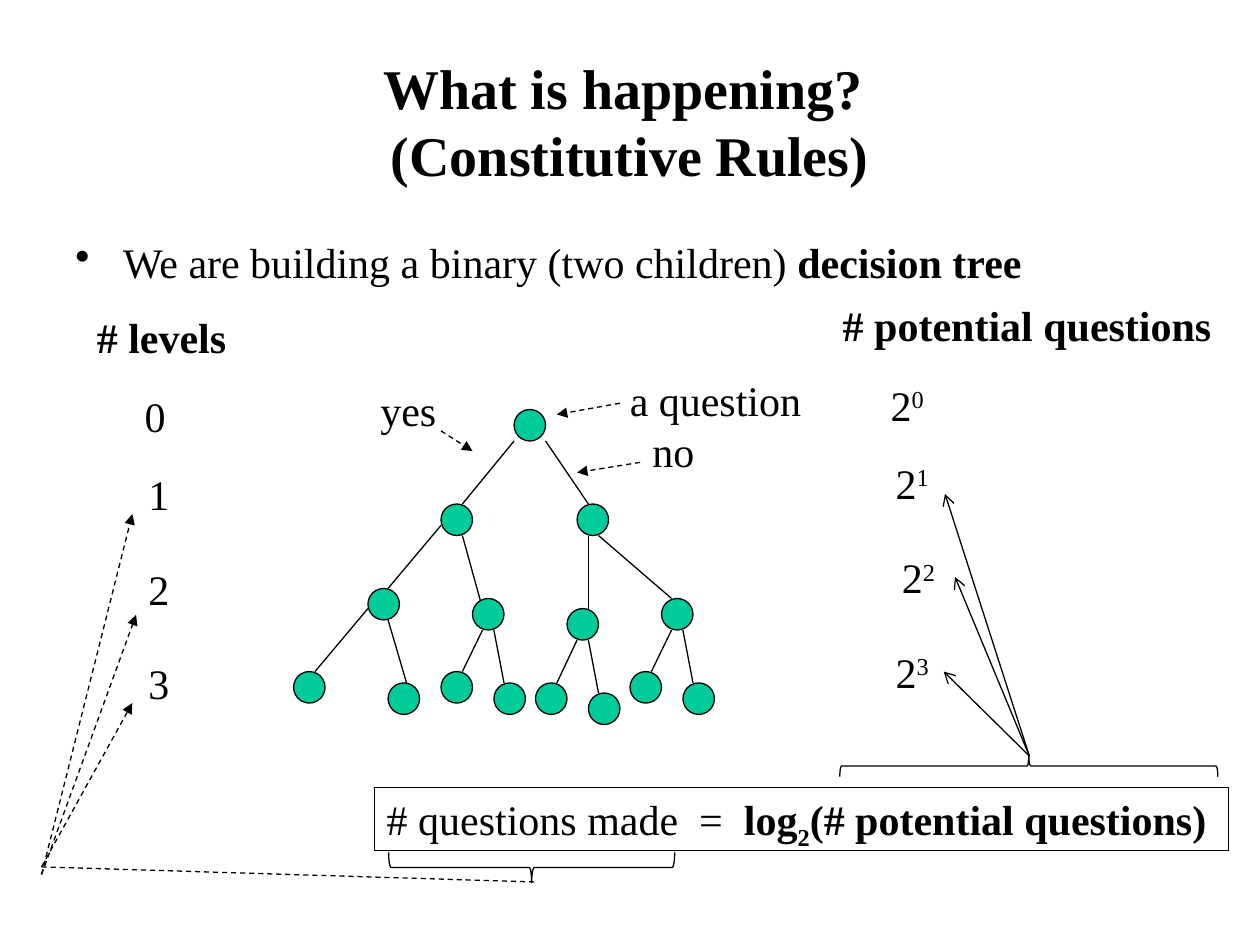
from lxml.etree import SubElement
from pptx import Presentation
from pptx.dml.color import RGBColor
from pptx.enum.dml import MSO_LINE
from pptx.enum.shapes import MSO_CONNECTOR, MSO_SHAPE as SHAPE
from pptx.enum.text import MSO_ANCHOR as ANCHOR, PP_ALIGN as ALIGN
from pptx.oxml.ns import qn
from pptx.util import Inches, Pt

FONT, BLACK, GREEN = "Times New Roman", "000000", "00CC99"
NODE = 0.25

TITLE = [("What is happening? ", "b"), ("\n", ""), ("(Constitutive Rules)", "b")]
BULLET = [("We are building a binary (two children) ", ""), ("decision tree", "b")]
FORMULA = [("# questions made  =  ", ""), ("log", "b"), ("2", "b_"),
           ("(# potential questions)", "b")]

# Left and top of each node, level by level
NODES = [
    [(4.08, 3.25)],
    [(3.5, 4), (4.58, 4)],
    [(2.92, 4.67), (3.75, 4.75), (4.5, 4.83), (5.25, 4.75)],
    [(2.33, 5.33), (3.08, 5.42), (3.5, 5.33), (3.92, 5.42),
     (4.25, 5.42), (4.67, 5.5), (5, 5.33), (5.42, 5.42)],
]
# From and to of each branch: x, y, x, y
BRANCHES = [
    (4.08, 3.5, 3.67, 4), (4.33, 3.5, 4.67, 4),
    (3.5, 4.17, 3.08, 4.67), (3.67, 4.25, 3.83, 4.83),
    (4.67, 4.25, 4.67, 4.83), (4.75, 4.25, 5.33, 4.75),
    (2.92, 4.83, 2.5, 5.33), (3.08, 4.92, 3.25, 5.5),
    (3.83, 5, 3.67, 5.33), (3.92, 5, 4, 5.42),
    (4.58, 5.08, 4.42, 5.42), (4.67, 5.08, 4.75, 5.5),
    (5.33, 5, 5.17, 5.33), (5.42, 5, 5.5, 5.42),
]
# Label, its box, and its dashed arrow
CALLOUTS = [
    ("a question", (4.9, 2.92, 1.56, 0.5), (4.92, 3.2, 4.42, 3.29)),
    ("no", (5.08, 3.33, 0.53, 0.5), (5.08, 3.67, 4.58, 3.75)),
    ("yes", (2.92, 3, 0.65, 0.5), (3.5, 3.42, 3.75, 3.58)),
]
HEADS = [("# levels", (0.67, 2.42, 1.23, 0.5)),
         ("# potential questions", (6.59, 2.33, 3.16, 0.5))]
# Left and top of each level number, then of its power of two
LEVELS = [(1.05, 3.05, 6.97, 2.96), (1.08, 3.67, 7.01, 3.58),
          (1.08, 4.42, 7.06, 4.33), (1.08, 5.17, 7.01, 5.08)]
TO_LEVELS = [(0.33, 6.94, 1.05, 4.08), (0.33, 6.94, 1.08, 4.88),
             (0.33, 6.88, 1.05, 5.58)]
FORK = (8.17, 6)
TO_POWERS = [(7.49, 5.33), (7.58, 4.58), (7.5, 3.92)]

deck = Presentation()
deck.slide_width, deck.slide_height = Inches(10), Inches(7.5)
shapes = deck.slides.add_slide(deck.slide_layouts[6]).shapes


def color(code):
    return RGBColor.from_string(code)


def text(parts, box, size=24, wrap=False, align=ALIGN.LEFT, anchor=ANCHOR.TOP,
         host=None):
    """Write (words, style) parts; b is bold, ^ is raised, _ is lowered."""
    host = host or shapes.add_textbox(*map(Inches, box))
    frame = host.text_frame
    frame.word_wrap, frame.vertical_anchor = wrap, anchor
    para = frame.paragraphs[0]
    para.alignment = align
    for words, style in parts:
        if words == "\n":
            para.add_line_break()
            continue
        run = para.add_run()
        run.text = words
        font = run.font
        font.name, font.size, font.bold = FONT, Pt(size), "b" in style
        font.color.rgb = color(BLACK)
        if "^" in style or "_" in style:
            shift = "30000" if "^" in style else "-25000"
            font._element.set("baseline", shift)
    return para


def bullet(para, indent):
    para.space_before = Pt(4.8)
    props = para._p.get_or_add_pPr()
    props.set("marL", str(Inches(indent)))
    props.set("indent", str(-Inches(indent)))
    SubElement(props, qn("a:buChar")).set("char", "•")


def shape(kind, box, fill=None):
    item = shapes.add_shape(kind, *map(Inches, box))
    item.shadow.inherit = False
    if fill:
        item.fill.solid()
        item.fill.fore_color.rgb = color(fill)
    else:
        item.fill.background()
    item.line.color.rgb, item.line.width = color(BLACK), Pt(0.75)
    return item


def line(ends, tip=None, dash=False):
    item = shapes.add_connector(MSO_CONNECTOR.STRAIGHT, *map(Inches, ends))
    item.line.color.rgb, item.line.width = color(BLACK), Pt(0.75)
    if dash:
        item.line.dash_style = MSO_LINE.DASH
    if tip:
        SubElement(item.line._get_or_add_ln(), qn("a:tailEnd")).set("type", tip)
    SubElement(item._element.spPr, qn("a:effectLst"))


def brace(box, down=False):
    """Lay a brace flat, with its point up or down."""
    item = shape(SHAPE.LEFT_BRACE, box)
    item.rotation = 90
    if down:
        item._element.spPr.xfrm.set("flipH", "1")


text(TITLE, (0.75, 0.33, 8.5, 1.25), size=32, wrap=True,
     align=ALIGN.CENTER, anchor=ANCHOR.MIDDLE)
bullet(text(BULLET, (0.5, 1.83, 8.83, 5), wrap=True), 0.38)

for ends in BRANCHES:
    line(ends)
for row in NODES:
    for left, top in row:
        shape(SHAPE.OVAL, (left, top, NODE, NODE), GREEN)
for words, box, ends in CALLOUTS:
    line(ends, "triangle", dash=True)
    text([(words, "")], box)

for words, box in HEADS:
    text([(words, "b")], box)
for level, (left, top, right, high) in enumerate(LEVELS):
    text([(str(level), "")], (left, top, 0.37, 0.5))
    text([("2", ""), (str(level), "^")], (right, high, 0.48, 0.5))

frame_box = (2.97, 6.25, 6.78, 0.5)
text(FORMULA, frame_box, host=shape(SHAPE.RECTANGLE, frame_box))
brace((8.08, 4.58, 0.17, 3))
brace((4.1, 5.75, 0.24, 2.27), down=True)
line((0.33, 6.88, 4.25, 7), dash=True)
for ends in TO_LEVELS:
    line(ends, "triangle", dash=True)
for end in TO_POWERS:
    line(FORK + end, "arrow")

deck.save("out.pptx")
